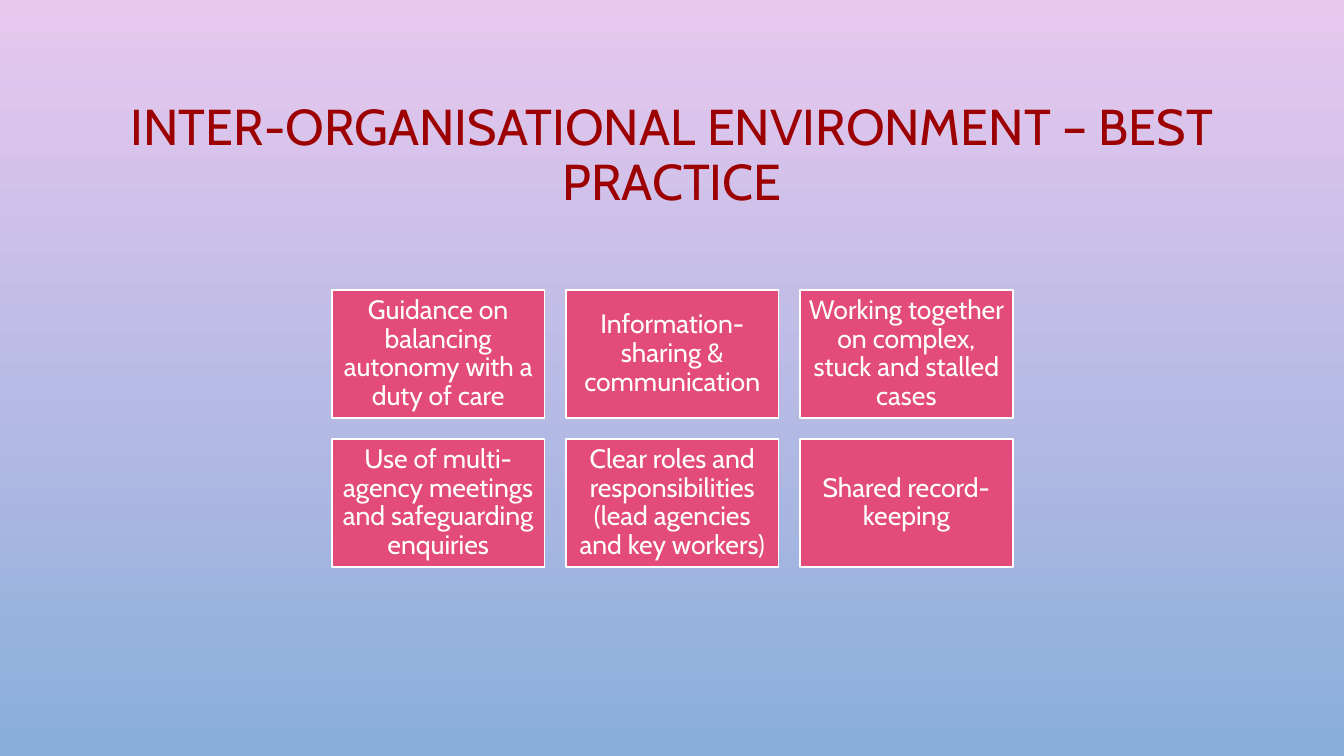
from pptx import Presentation
from pptx.dml.color import RGBColor
from pptx.enum import shapes, text
from pptx.util import Pt

HUES = {"top": "E9C8EF", "base": "89AEDB", "title": "9C0001",
        "card": "E34B7A", "white": "FFFFFF"}
CARDS = [
    "Guidance on balancing autonomy with a duty of care",
    "Information-sharing & communication",
    "Working together on complex, stuck and stalled cases",
    "Use of multi-agency meetings and safeguarding enquiries",
    "Clear roles and responsibilities (lead agencies and key workers)",
    "Shared record-keeping",
]
COLS = 3
LEFT, TOP = 237, 207.2
WIDE, HIGH, GAP = 152, 91.2, 15.2


def hue(name):
    return RGBColor.from_string(HUES[name])


def apply(item, values):
    for key, value in values.items():
        setattr(item, key, value)


def paint(slide):
    """Fill the background with a gradient from top to base."""
    fill = slide.background.fill
    fill.gradient()
    fill.gradient_angle = 270
    for stop, name, place in zip(fill.gradient_stops, ("top", "base"), (0, 1)):
        stop.color.rgb = hue(name)
        stop.position = place


def write(shape, words, size, color, inset):
    """Put centred text in the middle of a shape."""
    frame = shape.text_frame
    apply(frame, {"word_wrap": True, "auto_size": text.MSO_AUTO_SIZE.NONE,
                  "vertical_anchor": text.MSO_ANCHOR.MIDDLE})
    apply(frame, {f"margin_{side}": Pt(inset)
                  for side in ("left", "top", "right", "bottom")})
    para = frame.paragraphs[0]
    apply(para, {"text": words, "alignment": text.PP_ALIGN.CENTER,
                 "line_spacing": 0.9})
    apply(para.font, {"name": "Cabin", "size": Pt(size)})
    para.font.color.rgb = hue(color)


def add_title(slide, words):
    box = slide.shapes.add_textbox(Pt(72), Pt(49), Pt(816), Pt(126))
    write(box, words, 36, "title", 7.2)


def add_card(slide, left, top, words):
    card = slide.shapes.add_shape(shapes.MSO_SHAPE.RECTANGLE,
                                  Pt(left), Pt(top), Pt(WIDE), Pt(HIGH))
    card.shadow.inherit = False
    card.fill.solid()
    card.fill.fore_color.rgb = hue("card")
    card.line.color.rgb = hue("white")
    card.line.width = Pt(1.25)
    write(card, words, 19, "white", 5.7)


def main():
    deck = Presentation()
    apply(deck, {"slide_width": Pt(960), "slide_height": Pt(540)})
    slide = deck.slides.add_slide(deck.slide_layouts[6])
    paint(slide)
    add_title(slide, "INTER-ORGANISATIONAL ENVIRONMENT – BEST PRACTICE")
    for index, words in enumerate(CARDS):
        row, col = divmod(index, COLS)
        add_card(slide, LEFT + col * (WIDE + GAP), TOP + row * (HIGH + GAP), words)
    deck.save("out.pptx")


if __name__ == "__main__":
    main()
